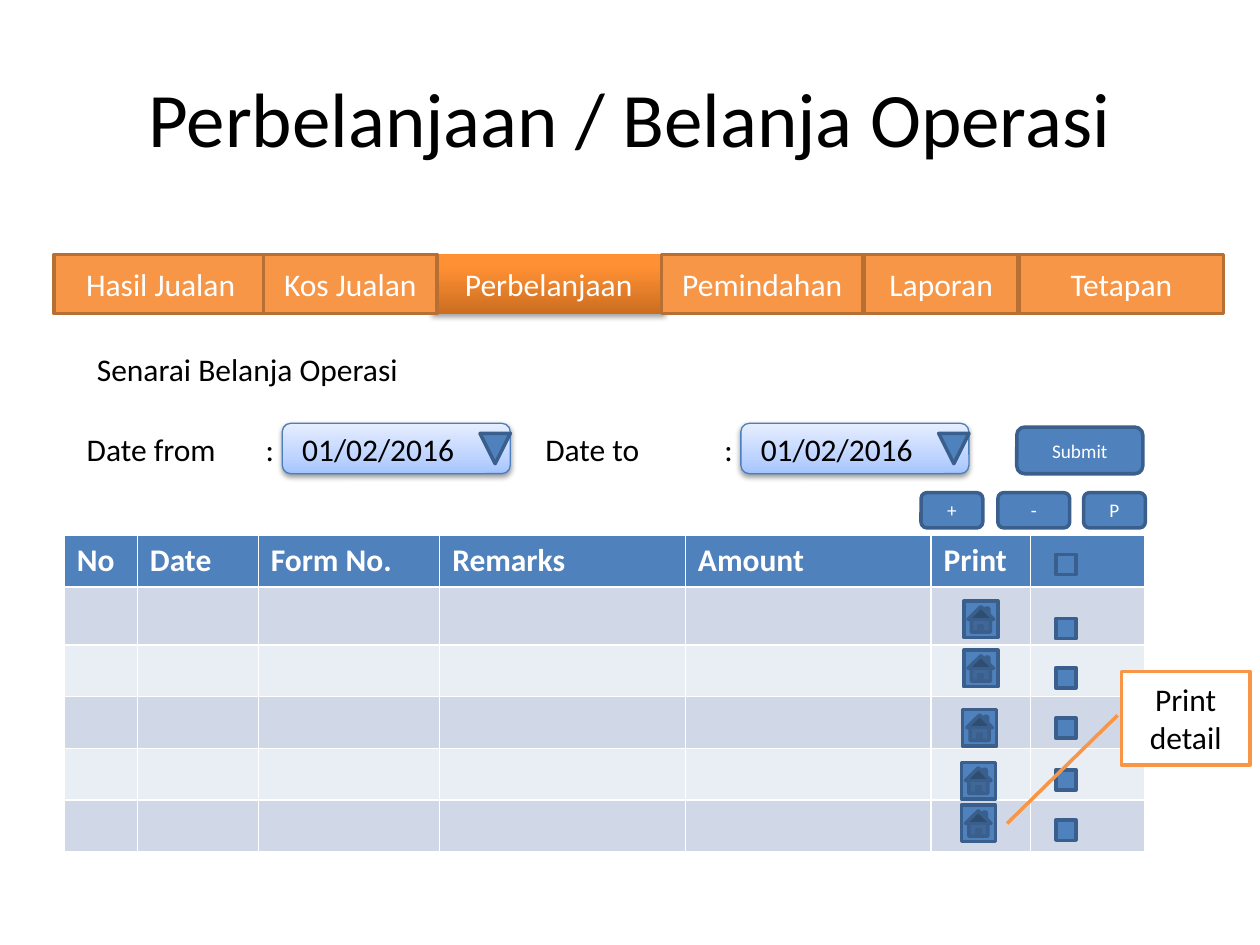
from lxml import etree
from pptx import Presentation
from pptx.dml.color import RGBColor
from pptx.enum.shapes import MSO_SHAPE
from pptx.enum.text import MSO_ANCHOR, PP_ALIGN
from pptx.oxml.ns import qn
from pptx.util import Inches, Pt

RECT, ROUND = MSO_SHAPE.RECTANGLE, MSO_SHAPE.ROUNDED_RECTANGLE
TRIANGLE, HOME = MSO_SHAPE.ISOSCELES_TRIANGLE, MSO_SHAPE.ACTION_BUTTON_HOME
CALLOUT = MSO_SHAPE.LINE_CALLOUT_1
LEFT, CENTER, MIDDLE = PP_ALIGN.LEFT, PP_ALIGN.CENTER, MSO_ANCHOR.MIDDLE

BLACK = RGBColor(0x00, 0x00, 0x00)
WHITE = RGBColor(0xFF, 0xFF, 0xFF)
BLUE = RGBColor(0x4F, 0x81, 0xBD)
DARK_BLUE = RGBColor(0x3A, 0x5F, 0x8C)
FIELD_LINE = RGBColor(0x4B, 0x7E, 0xBC)
ORANGE = RGBColor(0xF7, 0x96, 0x46)
DARK_ORANGE = RGBColor(0xB7, 0x6F, 0x34)
BAND_DARK = RGBColor(0xD0, 0xD8, 0xE8)
BAND_LIGHT = RGBColor(0xE9, 0xED, 0xF4)
FIELD_STOPS = [(0, RGBColor(0xA4, 0xC4, 0xFF)), (35, RGBColor(0xBF, 0xD4, 0xFF)),
               (100, RGBColor(0xE6, 0xEE, 0xFF))]
ACTIVE_STOPS = [(0, RGBColor(0xCC, 0x6E, 0x20)), (80, RGBColor(0xFF, 0x90, 0x34)),
                (100, RGBColor(0xFF, 0x91, 0x36))]

prs = Presentation()
prs.slide_width, prs.slide_height = Inches(10), Inches(7.5)
slide = prs.slides.add_slide(prs.slide_layouts[6])


def add_item(kind, x, y, w, h, text="", size=18, color=WHITE, align=CENTER,
             fill=BLUE, line=DARK_BLUE, line_width=2):
    """Add a preset shape, or a text box when kind is None."""
    box = [Inches(v) for v in (x, y, w, h)]
    if kind is None:
        s = slide.shapes.add_textbox(*box)
    else:
        s = slide.shapes.add_shape(kind, *box)
        s.shadow.inherit = False
        s.fill.solid()
        s.fill.fore_color.rgb = fill
        if line is None:
            s.line.fill.background()
        else:
            s.line.color.rgb = line
            s.line.width = Pt(line_width)
    if text:
        tf = s.text_frame
        tf.word_wrap = True
        tf.vertical_anchor = MIDDLE
        tf.text = text
        p = tf.paragraphs[0]
        p.alignment = align
        r = p.runs[0]
        r.font.size, r.font.name = Pt(size), "Calibri"
        r.font.color.rgb = color
    return s


def add_gloss(s, stops, alpha, distance):
    """Give a shape an upward gradient and a soft shadow below it."""
    s.fill.gradient()
    s.fill.gradient_angle = 90
    sp_pr = s.element.spPr
    stop_list = sp_pr.find(qn("a:gradFill")).find(qn("a:gsLst"))
    for stop in list(stop_list):
        stop_list.remove(stop)
    for position, color in stops:
        stop = etree.SubElement(stop_list, qn("a:gs"), pos=str(position * 1000))
        etree.SubElement(stop, qn("a:srgbClr"), val=str(color))
    shadow = etree.SubElement(sp_pr.find(qn("a:effectLst")), qn("a:outerShdw"),
                              blurRad=str(Pt(3.1)), dist=str(Pt(distance)),
                              dir="5400000", rotWithShape="0")
    color = etree.SubElement(shadow, qn("a:srgbClr"), val=str(BLACK))
    etree.SubElement(color, qn("a:alpha"), val=str(alpha * 1000))


# Title and list heading
add_item(None, 0.5, 0.3, 9, 1.25, "Perbelanjaan / Belanja Operasi", 44, BLACK)
add_item(None, 0.67, 2.73, 2.62, 0.4, "Senarai Belanja Operasi", color=BLACK, align=LEFT)

# Menu tabs, the active one glossy
for label, x, w in [("Hasil Jualan", 0.43, 1.69), ("Perbelanjaan", 3.43, 1.85),
                    ("Laporan", 6.86, 1.22), ("Tetapan", 8.09, 1.62),
                    ("Pemindahan", 5.25, 1.6), ("Kos Jualan", 2.09, 1.38)]:
    active = label == "Perbelanjaan"
    s = add_item(RECT, x, 2.02, w, 0.47, label, fill=ORANGE,
                 line=None if active else DARK_ORANGE)
    if active:
        add_gloss(s, ACTIVE_STOPS, 35, 1.8)

# Small buttons above the table
for label, x, w in [("+", 7.31, 0.49), ("-", 7.92, 0.57), ("P", 8.6, 0.49)]:
    add_item(ROUND, x, 3.91, w, 0.28, label, 11)

# Expense table
headers = ["No", "Date", "Form No.", "Remarks", "Amount", "Print", ""]
col_widths = [0.58, 0.96, 1.44, 1.95, 1.95, 0.79, 0.91]
row_heights = [0.41, 0.46, 0.41, 0.41, 0.41, 0.41]
table = slide.shapes.add_table(len(row_heights), len(headers), Inches(0.51), Inches(4.25),
                               Inches(8.58), Inches(2.49)).table
for col, width in zip(table.columns, col_widths):
    col.width = Inches(width)
for i, height in enumerate(row_heights):
    table.rows[i].height = Inches(height)
    for j, header in enumerate(headers):
        cell = table.cell(i, j)
        cell.fill.solid()
        cell.fill.fore_color.rgb = BLUE if i == 0 else BAND_DARK if i % 2 else BAND_LIGHT
        if i == 0 and header:
            cell.text = header
            r = cell.text_frame.paragraphs[0].runs[0]
            r.font.size, r.font.name, r.font.bold = Pt(18), "Calibri", True
            r.font.color.rgb = WHITE

# Check boxes
for y in [4.4, 4.91, 5.3, 5.7, 6.11, 6.51]:
    add_item(RECT, 8.38, y, 0.16, 0.16)

# Date fields: label, colon and date sit on tab stops
for label, x in [("Date from", 0.59), ("Date to", 4.23)]:
    s = add_item(ROUND, x + 1.65, 3.36, 1.81, 0.4, line=FIELD_LINE, line_width=0.75)
    add_gloss(s, FIELD_STOPS, 38, 1.6)
    s = add_item(None, x, 3.36, 3.17, 0.4, f"{label}\t:\t01/02/2016", color=BLACK, align=LEFT)
    p_pr = s.text_frame.paragraphs[0]._p.get_or_add_pPr()
    tabs = etree.SubElement(p_pr, qn("a:tabLst"))
    for stop in (1.42, 1.71):
        etree.SubElement(tabs, qn("a:tab"), pos=str(Inches(stop)), algn="l")
    s = add_item(TRIANGLE, x + 3.22, 3.44, 0.24, 0.24)
    s.rotation = 180

# Print buttons
for x, y in [(7.65, 4.77), (7.65, 5.16), (7.64, 5.63), (7.63, 6.05), (7.63, 6.39)]:
    add_item(HOME, x, y, 0.27, 0.29)

# Callout and submit button
s = add_item(CALLOUT, 8.9, 5.33, 1.02, 0.74, "Print detail", color=BLACK,
             fill=WHITE, line=ORANGE)
for i, value in enumerate([0.47, -0.03, 1.63, -0.89]):
    s.adjustments[i] = value
add_item(ROUND, 8.07, 3.39, 1, 0.37, "Submit", 11)

prs.save("out.pptx")
